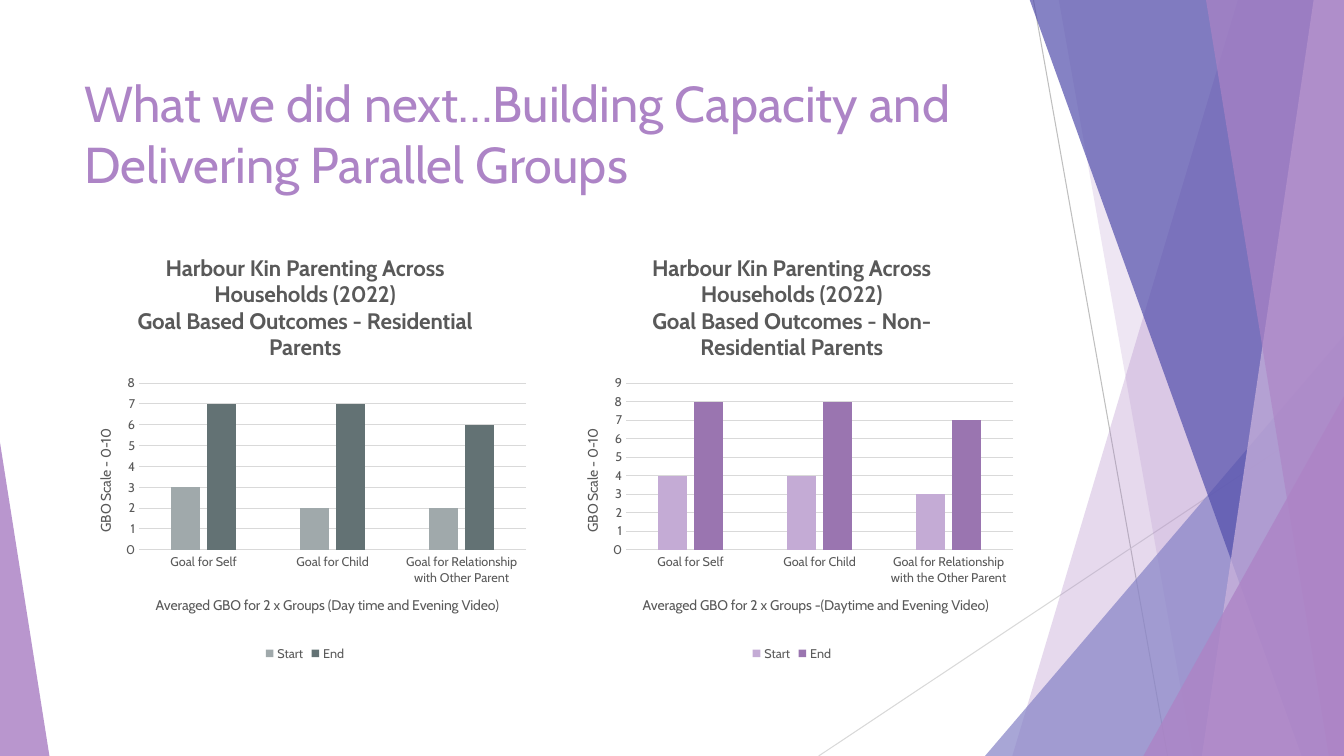
"""Build a slide with two goal-based outcome charts beside a faceted purple border."""
from lxml import etree
from pptx import Presentation
from pptx.chart.data import CategoryChartData
from pptx.dml.color import RGBColor
from pptx.enum import chart as ch, shapes as sh, text as tx
from pptx.oxml import parse_xml
from pptx.oxml.ns import nsdecls, qn
from pptx.util import Inches, Pt

PURPLE = RGBColor(0xAD, 0x84, 0xC6)
LILAC = RGBColor(0xCE, 0xB5, 0xDD)
PERIWINKLE = RGBColor(0x87, 0x84, 0xC7)
INDIGO = RGBColor(0x52, 0x4E, 0xAB)
SILVER = RGBColor(0xBF, 0xBF, 0xBF)
PALE = RGBColor(0xD9, 0xD9, 0xD9)
GREY = RGBColor(0x59, 0x59, 0x59)
MIST = RGBColor(0xA0, 0xA9, 0xAB)
SLATE = RGBColor(0x63, 0x72, 0x74)
MAUVE = RGBColor(0xC4, 0xAB, 0xD5)
PLUM = RGBColor(0x9A, 0x75, 0xB0)
FONT = "Cabin"
WIDTH, HEIGHT = 13.33, 7.5


def style(font, size, color, bold=False):
    for key, value in {"name": FONT, "size": Pt(size), "bold": bold}.items():
        setattr(font, key, value)
    font.color.rgb = color


def place(parent, position, **fractions):
    for old in parent.findall(qn("c:layout")):
        parent.remove(old)
    target = '<c:layoutTarget val="inner"/>' if "w" in fractions else ""
    modes = "".join(f'<c:{key}Mode val="edge"/>' for key in "xy")
    sizes = "".join(f'<c:{key} val="{value}"/>' for key, value in fractions.items())
    parent.insert(position, parse_xml(
        f'<c:layout {nsdecls("c")}><c:manualLayout>{target}{modes}{sizes}'
        "</c:manualLayout></c:layout>"))


deck = Presentation()
deck.slide_width, deck.slide_height = Inches(WIDTH), Inches(HEIGHT)
slide = deck.slides.add_slide(deck.slide_layouts[6])

for x1, y1, x2, y2, color in [(10.25, 0, 11.58, HEIGHT, SILVER), (WIDTH, 4.03, 8.12, HEIGHT, PALE)]:
    ray = slide.shapes.add_connector(
        sh.MSO_CONNECTOR.STRAIGHT, Inches(x1), Inches(y1), Inches(x2), Inches(y2))
    ray.line.color.rgb, ray.line.width = color, Pt(0.75)
    etree.SubElement(ray._element.spPr, qn("a:effectLst"))

facets = [
    ("band", (12.28, 10.04), PURPLE, 30),
    ("band", (10.5, 11.83), PURPLE, 20),
    ("triangle", (9.77, 3.33, 3.56, 1), PERIWINKLE, 72),
    ("band", (10.21, 12.91), INDIGO, 70),
    ("band", (13.03, 11.92), LILAC, 70),
    ("band", (11.96, 13.18), PURPLE, 65),
    ("triangle", (11.34, 3.93, 1.99, 1), PURPLE, 80),
    ("triangle", (0, 4.39, 0.49, 0), PURPLE, 85),
]
for kind, extent, color, opacity in facets:
    if kind == "band":
        top_x, bottom_x = extent
        outline = slide.shapes.build_freeform(Inches(top_x), Inches(-0.01))
        outline.add_line_segments([
            (Inches(x), Inches(y))
            for x, y in [(WIDTH, -0.01), (WIDTH, HEIGHT), (bottom_x, HEIGHT)]])
        facet = outline.convert_to_shape()
    else:
        left, top, width, apex = extent
        facet = slide.shapes.add_shape(
            sh.MSO_SHAPE.ISOSCELES_TRIANGLE,
            Inches(left), Inches(top), Inches(width), Inches(HEIGHT - top))
        facet.adjustments[0] = apex
    facet.shadow.inherit = False
    facet.line.fill.background()
    facet.fill.solid()
    facet.fill.fore_color.rgb = color
    tint = facet._element.spPr.find(".//" + qn("a:srgbClr"))
    etree.SubElement(tint, qn("a:alpha"), val=str(opacity * 1000))

heading = slide.shapes.add_textbox(Inches(0.74), Inches(0.67), Inches(9.4), Inches(1.44)).text_frame
heading.word_wrap = True
heading.vertical_anchor = tx.MSO_ANCHOR.TOP
heading.text = "What we did next…Building Capacity and Delivering Parallel Groups"
style(heading.paragraphs[0].runs[0].font, 36, PURPLE)

panels = [
    (0.74, 0.13, "Residential Parents", "Averaged GBO for 2 x Groups (Day time and Evening Video)",
     "Goal for Relationship with Other Parent", 8,
     [("Start", (3, 2, 2), MIST), ("End", (7, 7, 6), SLATE)]),
    (5.57, 0.19, "Non-Residential Parents", "Averaged GBO for 2 x Groups -(Daytime and Evening Video)",
     "Goal for Relationship with the Other Parent", 9,
     [("Start", (4, 4, 3), MAUVE), ("End", (8, 8, 7), PLUM)]),
]
for left, title_x, parents, groups, relationship, top_score, scores in panels:
    data = CategoryChartData()
    data.categories = ["Goal for Self", "Goal for Child", relationship]
    for name, values, _ in scores:
        data.add_series(name, values)
    outcomes = slide.shapes.add_chart(
        ch.XL_CHART_TYPE.COLUMN_CLUSTERED,
        Inches(left), Inches(2.36), Inches(4.57), Inches(4.24), data).chart
    style(outcomes.font, 10, GREY)

    bars = outcomes.plots[0]
    for key, value in {"gap_width": 219, "overlap": -27, "vary_by_categories": False}.items():
        setattr(bars, key, value)
    for series, (_, _, color) in zip(bars.series, scores):
        series.format.fill.solid()
        series.format.fill.fore_color.rgb = color

    goals, scale = outcomes.category_axis, outcomes.value_axis
    for key, value in {"minimum_scale": 0, "maximum_scale": top_score, "major_unit": 1}.items():
        setattr(scale, key, value)
    for axis in (goals, scale):
        axis.major_tick_mark = axis.minor_tick_mark = ch.XL_TICK_MARK.NONE
        style(axis.tick_labels.font, 9, GREY)
    scale.format.line.fill.background()
    for line in (goals.format.line, scale.major_gridlines.format.line):
        line.color.rgb, line.width = PALE, Pt(0.75)

    titles = [
        (outcomes, ["Harbour Kin Parenting Across Households (2022)",
                    f"Goal Based Outcomes - {parents}"], 16, True, title_x, 0.03),
        (goals, [groups], 10, False, 0.17, 0.83),
        (scale, ["GBO Scale - 0-10"], 10, False, 0.04, 0.44),
    ]
    for owner, lines, size, bold, x, y in titles:
        title = owner.chart_title if owner is outcomes else owner.axis_title
        title.text_frame.text = "\n".join(lines)
        for paragraph in title.text_frame.paragraphs:
            style(paragraph.font, size, GREY, bold)
            style(paragraph.runs[0].font, size, GREY, bold)
        place(title._element, 1, x=x, y=y)
    outcomes.chart_title.include_in_layout = False
    scale.axis_title.text_frame._txBody.bodyPr.set("rot", "-5400000")
    scale.axis_title.text_frame._txBody.bodyPr.set("vert", "horz")

    outcomes.has_legend = True
    outcomes.legend.position = ch.XL_LEGEND_POSITION.BOTTOM
    outcomes.legend.include_in_layout = False
    style(outcomes.legend.font, 9, GREY)
    place(outcomes._chartSpace.chart.plotArea, 0, x=0.14, y=0.34, w=0.84, h=0.39)

deck.save("out.pptx")
